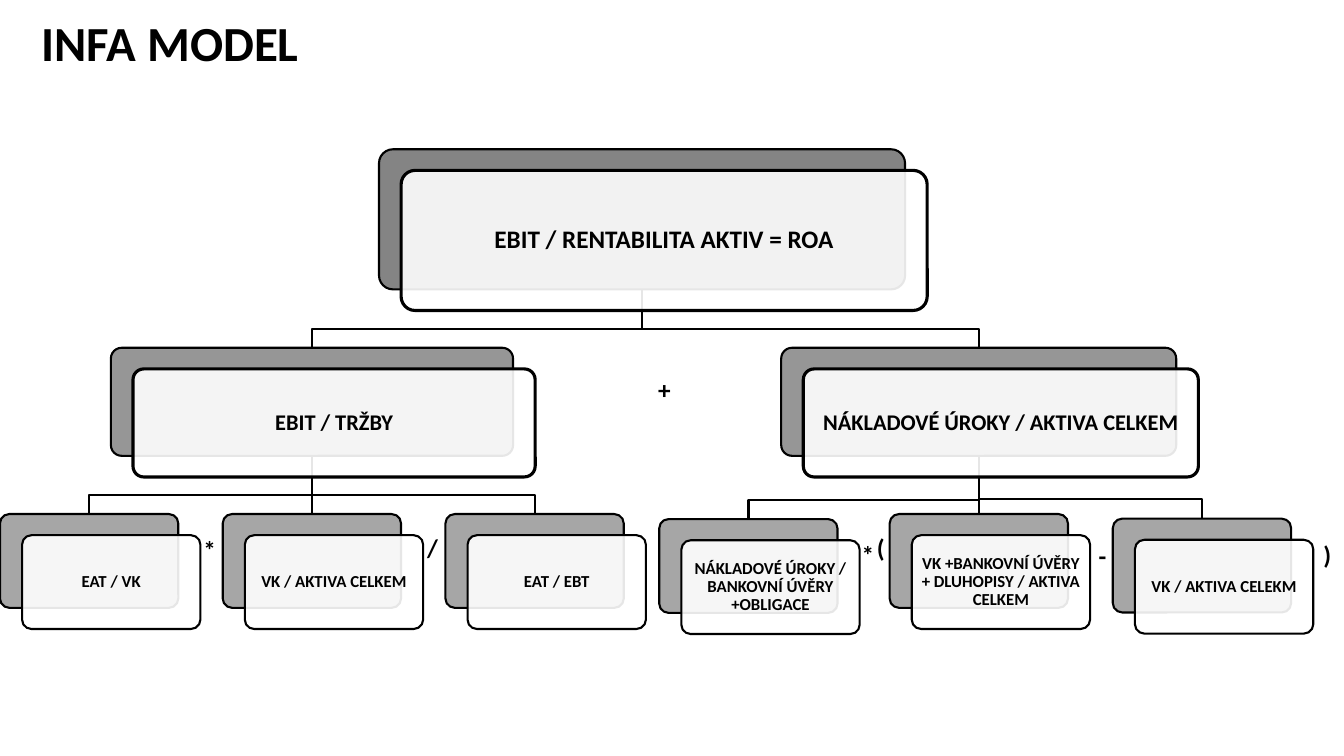
from collections import namedtuple

from lxml import etree
from pptx import Presentation
from pptx.dml import color
from pptx.enum import shapes, text
from pptx.oxml import ns
from pptx.util import Pt

Level = namedtuple("Level", "height fill size outline margin")
Ratio = namedtuple("Ratio", "label level left top width parent")

HEADING = "INFA MODEL"
LEAF_WIDTH = 127.4
RATIOS = {
    "roa": Ratio("EBIT / RENTABILITA AKTIV = ROA", "root", 270.7, 106.6, 375.8, None),
    "margin": Ratio("EBIT / TRŽBY", "branch", 79.2, 248.4, 287.3, "roa"),
    "interest": Ratio("NÁKLADOVÉ ÚROKY / AKTIVA CELKEM", "branch", 558, 248.4, 282.2, "roa"),
    "equity_return": Ratio("EAT / VK", "leaf", 0, 367.2, LEAF_WIDTH, "margin"),
    "equity_share": Ratio("VK / AKTIVA CELKEM", "leaf", 159.1, 367.2, LEAF_WIDTH, "margin"),
    "tax_burden": Ratio("EAT / EBT", "leaf", 318.2, 367.2, LEAF_WIDTH, "margin"),
    "interest_rate": Ratio("NÁKLADOVÉ ÚROKY / BANKOVNÍ ÚVĚRY +OBLIGACE", "leaf",
                           470.9, 370.8, LEAF_WIDTH, "interest"),
    "paid_capital": Ratio("VK +BANKOVNÍ ÚVĚRY + DLUHOPISY / AKTIVA CELKEM", "leaf",
                          635.5, 367.2, LEAF_WIDTH, "interest"),
    "own_capital": Ratio("VK / AKTIVA CELEKM", "leaf", 794.9, 370.5, LEAF_WIDTH, "interest"),
}
OPERATORS = [
    ("+", 463, 263.5), ("*", 138.2, 378), ("*", 608.4, 381.6), ("/", 298.1, 376.6),
    ("-", 777.6, 382.3), ("(", 619.2, 376.6), (")", 938.2, 381.6),
]


class Theme:
    font = "Calibri"
    ink = color.RGBColor.from_string("000000")
    paper = color.RGBColor.from_string("FFFFFF")
    opacity = 90000
    heading = 35
    operator = 18
    line = 1.5
    levels = {
        "root": Level(100.1, "848484", 18, 2.25, 5),
        "branch": Level(77.2, "969696", 16, 2.25, 5),
        "leaf": Level(67, "A6A6A6", 12, 1.5, 3.6),
    }


SHIFT_X, SHIFT_Y = 15.8, 15.1
BEND = 13.7


def write(frame, words, size, align=text.PP_ALIGN.LEFT, spacing=0.9):
    frame.word_wrap = True
    frame.text = words
    paragraph = frame.paragraphs[0]
    paragraph.alignment = align
    paragraph.line_spacing = spacing
    paragraph.font.name = Theme.font
    paragraph.font.size = Pt(size)
    paragraph.font.bold = True
    paragraph.font.color.rgb = Theme.ink


def outline(item, width):
    item.line.color.rgb = Theme.ink
    item.line.width = Pt(width)


def draw_branch(slide, parent, child):
    start_x = parent.left + parent.width / 2
    start_y = parent.top + Theme.levels[parent.level].height
    end_x = child.left + child.width / 2
    if abs(start_x - end_x) < 3:
        branch = slide.shapes.add_connector(
            shapes.MSO_CONNECTOR.STRAIGHT, Pt(start_x), Pt(start_y), Pt(start_x), Pt(child.top))
        etree.SubElement(branch.element.spPr, ns.qn("a:effectLst"))
        outline(branch, Theme.line)
        return
    bend_y = child.top - BEND
    corners = [(start_x, bend_y), (end_x, bend_y), (end_x, child.top)]
    builder = slide.shapes.build_freeform(Pt(start_x), Pt(start_y))
    builder.add_line_segments([(Pt(x), Pt(y)) for x, y in corners], close=False)
    branch = builder.convert_to_shape()
    branch.fill.background()
    branch.shadow.inherit = False
    outline(branch, Theme.line)


def draw_card(slide, left, top, width, height, fill, line):
    card = slide.shapes.add_shape(
        shapes.MSO_SHAPE.ROUNDED_RECTANGLE, Pt(left), Pt(top), Pt(width), Pt(height))
    card.adjustments[0] = 0.1
    card.shadow.inherit = False
    card.fill.solid()
    card.fill.fore_color.rgb = fill
    outline(card, line)
    return card


def draw_ratio(slide, ratio):
    level = Theme.levels[ratio.level]
    draw_card(slide, ratio.left, ratio.top, ratio.width, level.height,
              color.RGBColor.from_string(level.fill), Theme.line)
    front = draw_card(slide, ratio.left + SHIFT_X, ratio.top + SHIFT_Y, ratio.width,
                      level.height, Theme.paper, level.outline)
    tint = front.element.spPr.find(ns.qn("a:solidFill"))[0]
    etree.SubElement(tint, ns.qn("a:alpha"), val=str(Theme.opacity))
    frame = front.text_frame
    frame.margin_left = frame.margin_right = Pt(level.margin)
    frame.margin_top = frame.margin_bottom = Pt(level.margin)
    frame.vertical_anchor = text.MSO_ANCHOR.MIDDLE
    write(frame, ratio.label, level.size, text.PP_ALIGN.CENTER)


def main():
    deck = Presentation()
    deck.slide_width, deck.slide_height = Pt(960), Pt(540)
    slide = deck.slides.add_slide(deck.slide_layouts[5])

    heading = slide.shapes.title
    heading.left, heading.top, heading.width, heading.height = Pt(22.3), Pt(10), Pt(937), Pt(50)
    heading.text_frame.vertical_anchor = text.MSO_ANCHOR.TOP
    write(heading.text_frame, HEADING, Theme.heading)

    for ratio in RATIOS.values():
        if ratio.parent:
            draw_branch(slide, RATIOS[ratio.parent], ratio)
    for ratio in RATIOS.values():
        draw_ratio(slide, ratio)
    for sign, left, top in OPERATORS:
        operator = slide.shapes.add_textbox(Pt(left), Pt(top), Pt(33.8), Pt(28.8))
        write(operator.text_frame, sign, Theme.operator, spacing=1.0)

    deck.save("out.pptx")


if __name__ == "__main__":
    main()
